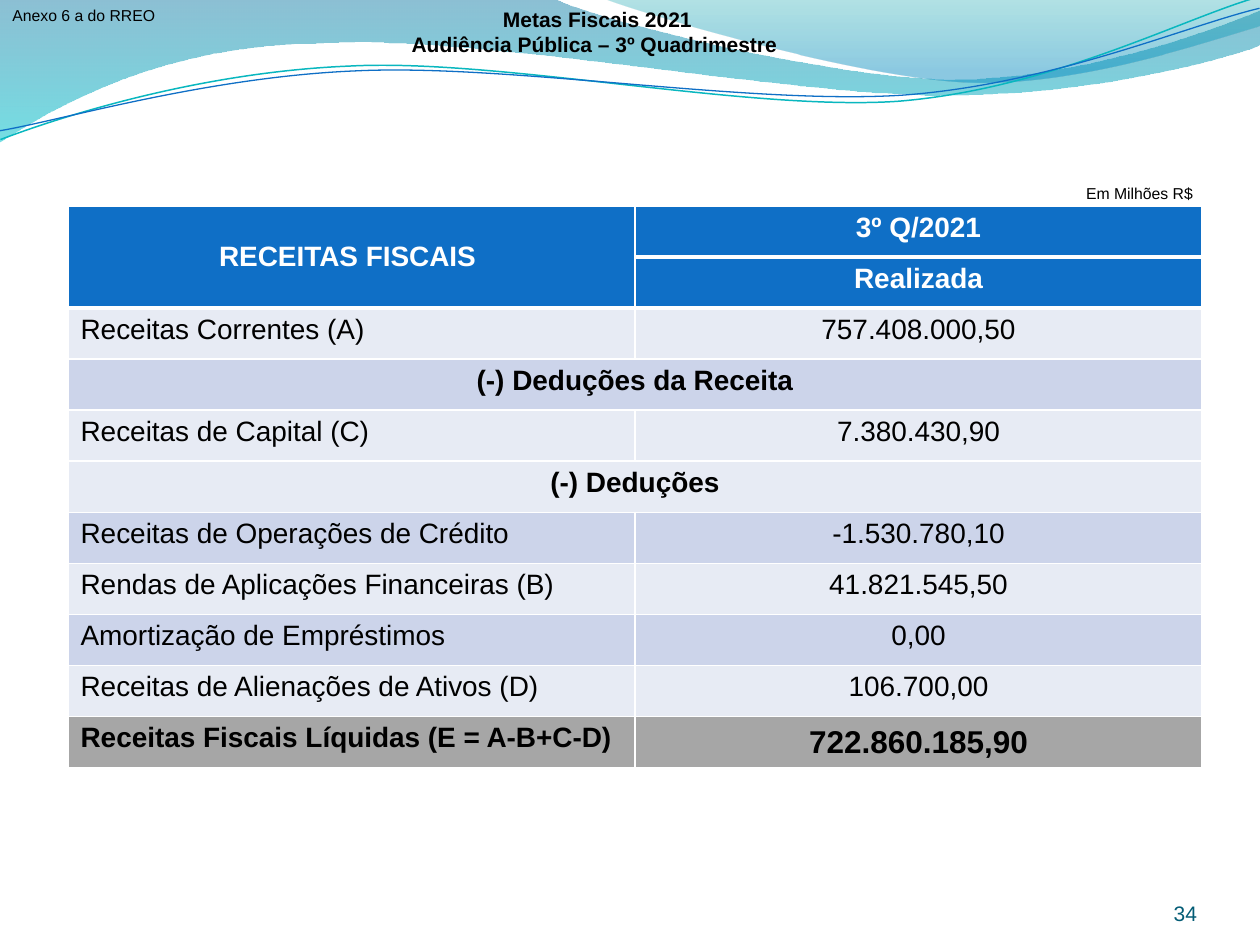
from dataclasses import dataclass

from lxml.etree import SubElement
from pptx import Presentation
from pptx.dml.color import RGBColor
from pptx.enum.text import MSO_ANCHOR as Anchor, PP_ALIGN as Align
from pptx.oxml.ns import qn
from pptx.util import Pt

SCALE = 914400 / 126  # EMU in one px


def px(length):
    return round(length * SCALE)


@dataclass(frozen=True)
class Theme:
    font: str = "Arial"
    ink: str = "000000"
    white: str = "FFFFFF"
    header: str = "0F6FC6"
    light: str = "E7EBF4"
    dark: str = "CCD4EA"
    total: str = "A6A6A6"
    teal: str = "09B7BF"
    number: str = "035C75"
    note_size: int = 9
    title_size: int = 12
    table_size: int = 16
    total_size: int = 18
    thin: float = 0.96
    thick: float = 3


class SlideBuilder:
    def __init__(self, page, theme):
        self.page = page
        self.theme = theme

    def outline(self, start, segments, close):
        """Draw segments of 2 numbers as lines and of 6 numbers as cubic curves."""
        points = [(px(segment[i]), px(segment[i + 1]))
                  for segment in segments for i in range(0, len(segment), 2)]
        builder = self.page.shapes.build_freeform(*map(px, start), scale=1.0)
        builder.add_line_segments(points, close=close)
        shape = builder.convert_to_shape()
        shape.shadow.inherit = False
        steps = iter(list(shape._element.iter(qn("a:lnTo"))))
        for segment in segments:
            step = next(steps)
            if len(segment) == 6:
                step.tag = qn("a:cubicBezTo")
                for _ in range(2):
                    extra = next(steps)
                    step.append(extra[0])
                    extra.getparent().remove(extra)
        return shape

    def wave(self, start, segments, stops, angle):
        """Draw a filled wave; stops are (percent, colour, opacity percent)."""
        shape = self.outline(start, segments, close=True)
        shape.line.fill.background()
        shape.fill.gradient()
        gradient = shape._element.spPr.find(qn("a:gradFill"))
        for child in list(gradient):
            gradient.remove(child)
        stop_list = SubElement(gradient, qn("a:gsLst"))
        for position, color, opacity in stops:
            stop = SubElement(stop_list, qn("a:gs"), pos=str(position * 1000))
            fill = SubElement(stop, qn("a:srgbClr"), val=color)
            SubElement(fill, qn("a:alpha"), val=str(opacity * 1000))
        SubElement(gradient, qn("a:lin"), ang=str(angle * 60000), scaled="0")

    def curve(self, start, segments, color, width, rotation):
        shape = self.outline(start, segments, close=False)
        shape.rotation = rotation
        shape.fill.background()
        shape.line.color.rgb = RGBColor.from_string(color)
        shape.line.width = Pt(width)

    def style(self, frame, size, color, align, bold=False):
        for para in frame.paragraphs:
            para.alignment = align
            for span in para.runs:
                font = span.font
                font.name, font.size, font.bold = self.theme.font, Pt(size), bold
                font.color.rgb = RGBColor.from_string(color)

    def text(self, words, place, size, align, color=None, bold=False,
             anchor=Anchor.TOP, inset=True):
        box = self.page.shapes.add_textbox(*map(px, place))
        frame = box.text_frame
        frame.word_wrap = True
        frame.vertical_anchor = anchor
        if not inset:
            frame.margin_left = frame.margin_right = 0
            frame.margin_top = frame.margin_bottom = 0
        frame.text = words
        self.style(frame, size, color or self.theme.ink, align, bold)

    def borders(self, cell, top, bottom):
        properties = cell._tc.get_or_add_tcPr()
        thin = self.theme.thin
        for side, width in (("L", thin), ("R", thin), ("T", top), ("B", bottom)):
            line = SubElement(properties, qn(f"a:ln{side}"), w=str(Pt(width)))
            fill = SubElement(line, qn("a:solidFill"))
            SubElement(fill, qn("a:srgbClr"), val=self.theme.white)

    def table(self, rows, place):
        """Rows are (label, value, fill); a None value spans the label over both."""
        theme = self.theme
        last = len(rows) - 1
        # add_table shares width and height equally among columns and rows
        table = self.page.shapes.add_table(len(rows), 2, *map(px, place)).table
        for r, (label, value, fill) in enumerate(rows):
            header = fill == theme.header
            bold = header or value is None or r == last
            for c, words in enumerate((label, value)):
                cell = table.cell(r, c)
                self.borders(cell, theme.thick if r in (1, 2) else theme.thin,
                             theme.thick if r == 0 or (r, c) == (1, 0) else theme.thin)
                cell.fill.solid()
                cell.fill.fore_color.rgb = RGBColor.from_string(fill)
                if not words:
                    continue
                cell.text_frame.text = words
                size = theme.total_size if (r, c) == (last, 1) else theme.table_size
                centred = header or c == 1 or value is None
                self.style(cell.text_frame, size, theme.white if header else theme.ink,
                           Align.CENTER if centred else Align.LEFT, bold)
            if value is None:
                table.cell(r, 0).merge(table.cell(r, 1))
        table.cell(0, 0).merge(table.cell(1, 0))
        table.cell(0, 0).vertical_anchor = Anchor.MIDDLE
        total = table.cell(last, 1)
        total.vertical_anchor = Anchor.MIDDLE
        total.margin_left = total.margin_right = total.margin_top = px(1)
        total.margin_bottom = 0


def main():
    theme = Theme()
    deck = Presentation()
    deck.slide_width, deck.slide_height = px(1260), px(945)
    slide = SlideBuilder(deck.slides.add_slide(deck.slide_layouts[6]), theme)

    slide.wave((0, 0), [
        (554, -1), (600, 21, 837, 79, 955, 79), (1074, 79, 1207, 33, 1260, 11),
        (1261, 45), (1239, 55, 1096, 96, 940, 95), (784, 95, 481, 35, 324, 43),
        (163, 44, 58, 105, -1, 142), (0, 0),
    ], [(0, "0074A0", 45), (100, "00C4CD", 55)], 90)
    slide.wave((604, -1), [
        (641, 14, 859, 78, 969, 82), (1079, 86, 1211, 40, 1260, 26), (1260, 0),
        (604, -1),
    ], [(20, "008ABF", 45), (100, "00A0A8", 30)], 270)
    tilt = 357.3
    slide.curve((-2, 110), [
        (59, 90, 200, 52, 350, 53), (499, 52, 745, 117, 896, 114),
        (1049, 109, 1184, 45, 1260, 27),
    ], theme.teal, 0.85, tilt)
    slide.curve((-2, 101), [
        (58, 94, 207, 57, 357, 58), (509, 58, 750, 111, 902, 108),
        (1052, 104, 1188, 52, 1262, 38),
    ], theme.header, 0.75, tilt)

    slide.table([
        ("RECEITAS FISCAIS ", "3º Q/2021", theme.header),
        ("", "Realizada", theme.header),
        ("Receitas Correntes (A)", "757.408.000,50", theme.light),
        ("(-) Deduções da Receita", None, theme.dark),
        ("Receitas de Capital (C)", "7.380.430,90", theme.light),
        ("(-) Deduções", None, theme.light),
        ("Receitas de Operações de Crédito", "-1.530.780,10", theme.dark),
        ("Rendas de Aplicações Financeiras (B)", "41.821.545,50", theme.light),
        ("Amortização de Empréstimos", "0,00", theme.dark),
        ("Receitas de Alienações de Ativos (D)", "106.700,00", theme.light),
        ("Receitas Fiscais Líquidas (E = A-B+C-D)", "722.860.185,90", theme.total),
    ], (68, 206, 1134, 562))

    slide.text("34", (1092, 876, 105, 50), theme.title_size, Align.RIGHT,
               color=theme.number, anchor=Anchor.BOTTOM, inset=False)
    slide.text("Em Milhões R$", (1073, 178, 133, 31), theme.note_size, Align.CENTER)
    slide.text("Anexo 6 a do RREO", (0, 0, 171, 31), theme.note_size, Align.LEFT)
    slide.text("Metas Fiscais 2021\nAudiência Pública – 3º Quadrimestre ",
               (384, 0, 427, 63), theme.title_size, Align.CENTER,
               bold=True, anchor=Anchor.MIDDLE)
    deck.save("out.pptx")


if __name__ == "__main__":
    main()
